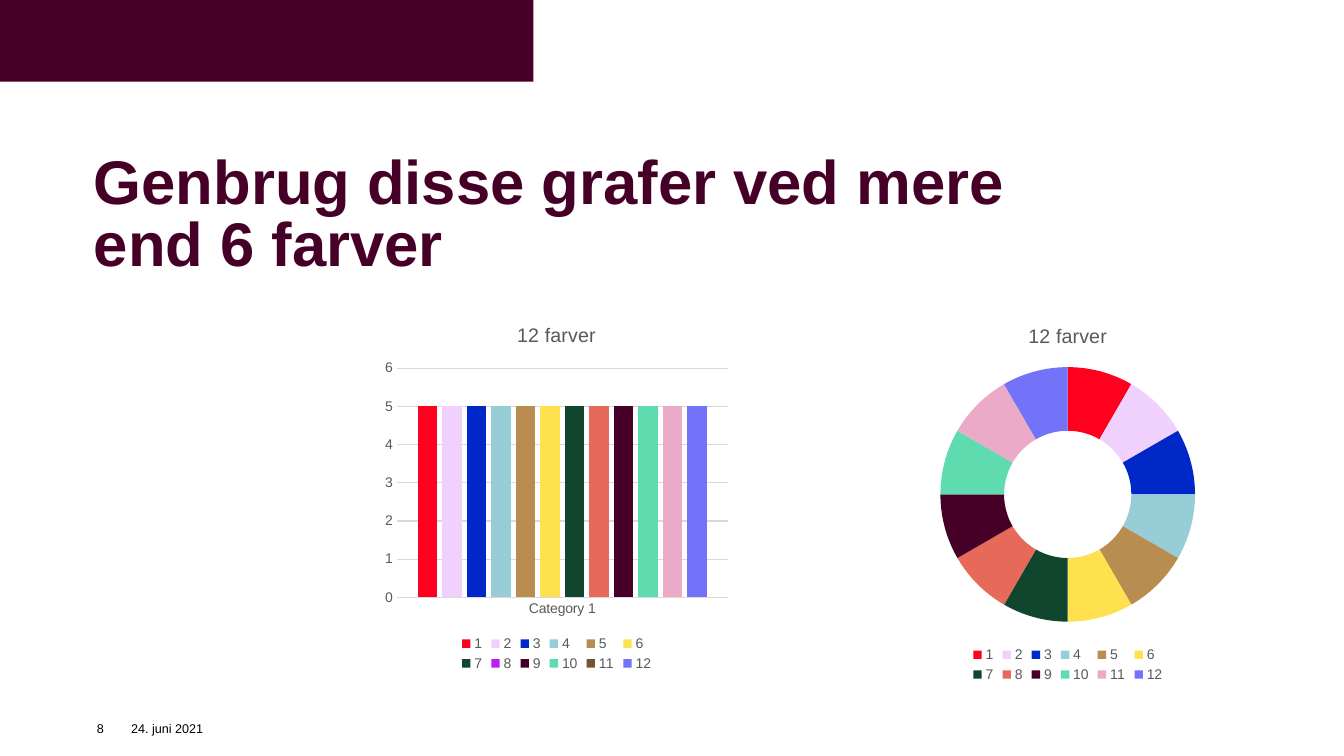
from dataclasses import dataclass

from pptx import Presentation
from pptx.chart.data import CategoryChartData
from pptx.dml.color import RGBColor
from pptx.enum.chart import XL_CHART_TYPE, XL_LEGEND_POSITION, XL_TICK_MARK
from pptx.enum.shapes import MSO_SHAPE
from pptx.enum.text import MSO_ANCHOR
from pptx.util import Inches, Pt

COLUMNS = XL_CHART_TYPE.COLUMN_CLUSTERED
DOUGHNUT = XL_CHART_TYPE.DOUGHNUT
LEGEND_BOTTOM = XL_LEGEND_POSITION.BOTTOM
NO_TICK = XL_TICK_MARK.NONE
RECTANGLE = MSO_SHAPE.RECTANGLE
TOP, MIDDLE = MSO_ANCHOR.TOP, MSO_ANCHOR.MIDDLE


@dataclass(frozen=True)
class Theme:
    font: str = "Arial"
    plum: str = "460028"
    black: str = "000000"
    chart_text: str = "595959"
    grid: str = "D9D9D9"
    title_size: int = 44
    chart_title_size: int = 14
    chart_size: int = 10
    footer_size: int = 9
    palette: tuple = (
        "FF001E", "F0D0FD", "0028C8", "96CDD7", "B98C50", "FFE150",
        "0F462D", "E6695A", "460028", "5FDCAF", "EBAAC8", "7373FA",
    )


THEME = Theme()
LABELS = [str(number) for number in range(1, len(THEME.palette) + 1)]
# Series whose legend key differs from the colour of its column
LEGEND_KEYS = {"8": "B81FF5", "11": "72542D"}


def rgb(value):
    return RGBColor.from_string(value)


def style_font(font, size, color, bold=False):
    font.name = THEME.font
    font.size = Pt(size)
    font.bold = bold
    font.color.rgb = rgb(color)


def paint(element, color):
    element.format.fill.solid()
    element.format.fill.fore_color.rgb = rgb(color)


def style_line(line, color):
    line.color.rgb = rgb(color)
    line.width = Pt(0.75)


def add_band(slide, left, top, width, height):
    band = slide.shapes.add_shape(
        RECTANGLE, Inches(left), Inches(top), Inches(width), Inches(height))
    band.shadow.inherit = False
    band.fill.solid()
    band.fill.fore_color.rgb = rgb(THEME.plum)
    band.line.fill.background()


def add_text(slide, text, box, size, color, bold=False, anchor=TOP, spacing=1.0):
    frame = slide.shapes.add_textbox(*map(Inches, box)).text_frame
    frame.word_wrap = True
    frame.vertical_anchor = anchor
    frame.margin_left = frame.margin_right = 0
    frame.margin_top = frame.margin_bottom = 0
    paragraph = frame.paragraphs[0]
    paragraph.text = text
    paragraph.line_spacing = spacing
    style_font(paragraph.font, size, color, bold)


def add_chart(slide, kind, box, categories, series):
    """Add a chart with the shared title, legend and font."""
    data = CategoryChartData()
    data.categories = categories
    for name, values in series:
        data.add_series(name, values)
    chart = slide.shapes.add_chart(kind, *map(Inches, box), data).chart
    style_font(chart.font, THEME.chart_size, THEME.black)
    chart.has_title = True
    heading = chart.chart_title.text_frame.paragraphs[0]
    heading.text = "12 farver"
    style_font(heading.font, THEME.chart_title_size, THEME.chart_text)
    chart.has_legend = True
    chart.legend.position = LEGEND_BOTTOM
    chart.legend.include_in_layout = False
    style_font(chart.legend.font, THEME.chart_size, THEME.chart_text)
    chart.plots[0].has_data_labels = False
    return chart


def style_axis(axis):
    axis.major_tick_mark = axis.minor_tick_mark = NO_TICK
    style_font(axis.tick_labels.font, THEME.chart_size, THEME.chart_text)


def add_column_chart(slide, box):
    chart = add_chart(slide, COLUMNS, box, ["Category 1"],
                      [(label, [5]) for label in LABELS])
    plot = chart.plots[0]
    plot.gap_width = 219
    plot.overlap = -27
    plot.vary_by_categories = False
    for series, color in zip(plot.series, THEME.palette):
        paint(series, LEGEND_KEYS.get(series.name, color))
        if series.name in LEGEND_KEYS:
            paint(series.points[0], color)

    style_axis(chart.category_axis)
    style_line(chart.category_axis.format.line, THEME.grid)
    scale = chart.value_axis
    style_axis(scale)
    scale.minimum_scale, scale.maximum_scale, scale.major_unit = 0, 6, 1
    scale.format.line.fill.background()
    scale.has_major_gridlines = True
    style_line(scale.major_gridlines.format.line, THEME.grid)


def add_doughnut_chart(slide, box):
    chart = add_chart(slide, DOUGHNUT, box, LABELS,
                      [("Series 1", [8] * len(LABELS))])
    plot = chart.plots[0]
    plot.vary_by_categories = True
    for index, color in enumerate(THEME.palette):
        sector = plot.series[0].points[index]
        paint(sector, color)
        sector.format.line.fill.background()


def main():
    deck = Presentation()
    deck.slide_width, deck.slide_height = Inches(13.33), Inches(7.5)
    slide = deck.slides.add_slide(deck.slide_layouts[6])

    add_band(slide, 0, 0, 5.29, 0.81)
    add_text(slide, "Genbrug disse grafer ved mere end 6 farver",
             (0.93, 1.5, 9.99, 1.31), THEME.title_size, THEME.plum,
             bold=True, anchor=MIDDLE, spacing=0.83)
    add_column_chart(slide, (3.75, 3.04, 3.54, 3.66))
    add_doughnut_chart(slide, (8.82, 3.04, 3.54, 3.77))
    for text, left, width in (("24. juni 2021", 1.3, 1.36), ("8", 0.96, 0.28)):
        add_text(slide, text, (left, 7.15, width, 0.2),
                 THEME.footer_size, THEME.black)

    deck.save("out.pptx")


if __name__ == "__main__":
    main()
